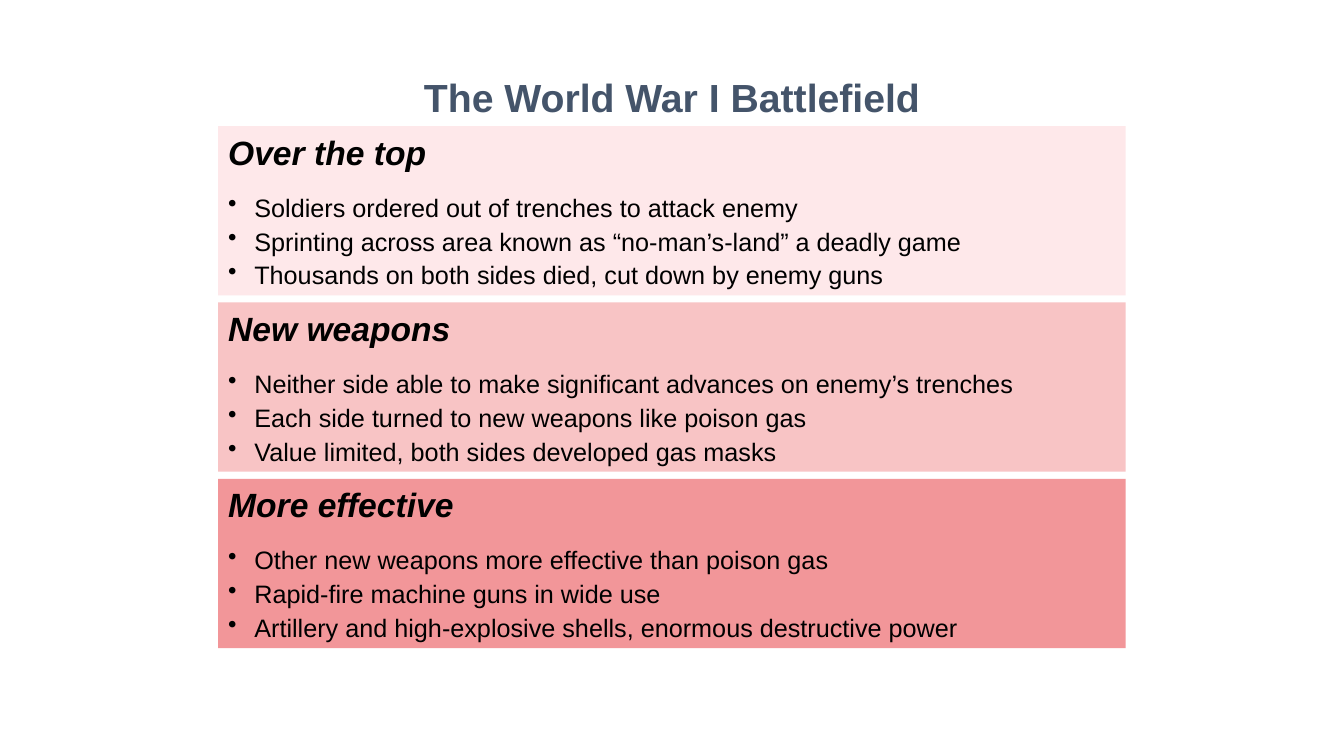
from pptx import Presentation
from pptx.dml.color import RGBColor
from pptx.enum.shapes import MSO_SHAPE
from pptx.enum.text import MSO_ANCHOR, PP_ALIGN
from pptx.oxml.xmlchemy import OxmlElement
from pptx.util import Inches, Pt

TITLE = "The World War I Battlefield"
PANELS = [
    ("Over the top", [
        "Soldiers ordered out of trenches to attack enemy",
        "Sprinting across area known as “no-man’s-land” a deadly game",
        "Thousands on both sides died, cut down by enemy guns",
    ]),
    ("New weapons", [
        "Neither side able to make significant advances on enemy’s trenches",
        "Each side turned to new weapons like poison gas",
        "Value limited, both sides developed gas masks",
    ]),
    ("More effective", [
        "Other new weapons more effective than poison gas",
        "Rapid-fire machine guns in wide use",
        "Artillery and high-explosive shells, enormous destructive power",
    ]),
]
THEME = {
    "panels": ["FEE8EA", "F8C4C5", "F29699"],
    "title": {"size": Pt(28), "bold": True, "color": "44546A"},
    "heading": {"size": Pt(24), "bold": True, "italic": True, "color": "000000"},
    "bullet": {"size": Pt(18), "bold": False, "color": "000000"},
}
WIDTH, HEIGHT = 13.33, 7.5
PANEL_W, PANEL_H, PITCH, TOP = 9, 1.68, 1.75, 1.25
TITLE_W, TITLE_H = 8.67, 0.58
INDENT = Inches(0.26)


def write(p, text, style, after=0):
    p.space_after = Pt(after)
    r = p.add_run()
    r.text = text
    r.font.name = "Arial"
    for key, value in THEME[style].items():
        if key == "color":
            r.font.color.rgb = RGBColor.from_string(value)
        else:
            setattr(r.font, key, value)


def hang(p, bullet):
    pPr = p._p.get_or_add_pPr()
    pPr.set("marL", str(INDENT))
    pPr.set("indent", str(-INDENT))
    if bullet:
        bu = OxmlElement("a:buChar")
        bu.set("char", "•")
        pPr.append(bu)


def frame(sp):
    tf = sp.text_frame
    tf.word_wrap = True
    tf.vertical_anchor = MSO_ANCHOR.MIDDLE
    return tf


def add_panel(s, row, heading, bullets):
    box = ((WIDTH - PANEL_W) / 2, TOP + row * PITCH, PANEL_W, PANEL_H)
    sp = s.shapes.add_shape(MSO_SHAPE.RECTANGLE, *map(Inches, box))
    sp.shadow.inherit = False
    sp.fill.solid()
    sp.fill.fore_color.rgb = RGBColor.from_string(THEME["panels"][row])
    sp.line.fill.background()
    tf = frame(sp)
    lines = [(heading, "heading", 14.4)] + [(b, "bullet", 2.6) for b in bullets]
    for i, (text, style, after) in enumerate(lines):
        p = tf.add_paragraph() if i else tf.paragraphs[0]
        p.alignment = PP_ALIGN.LEFT
        hang(p, style == "bullet")
        write(p, text, style, after)


def main():
    prs = Presentation()
    prs.slide_width, prs.slide_height = Inches(WIDTH), Inches(HEIGHT)
    s = prs.slides.add_slide(prs.slide_layouts[6])
    for row, (heading, bullets) in enumerate(PANELS):
        add_panel(s, row, heading, bullets)
    box = ((WIDTH - TITLE_W) / 2, TOP - TITLE_H, TITLE_W, TITLE_H)
    p = frame(s.shapes.add_textbox(*map(Inches, box))).paragraphs[0]
    p.alignment = PP_ALIGN.CENTER
    write(p, TITLE, "title")
    prs.save("out.pptx")


if __name__ == "__main__":
    main()
